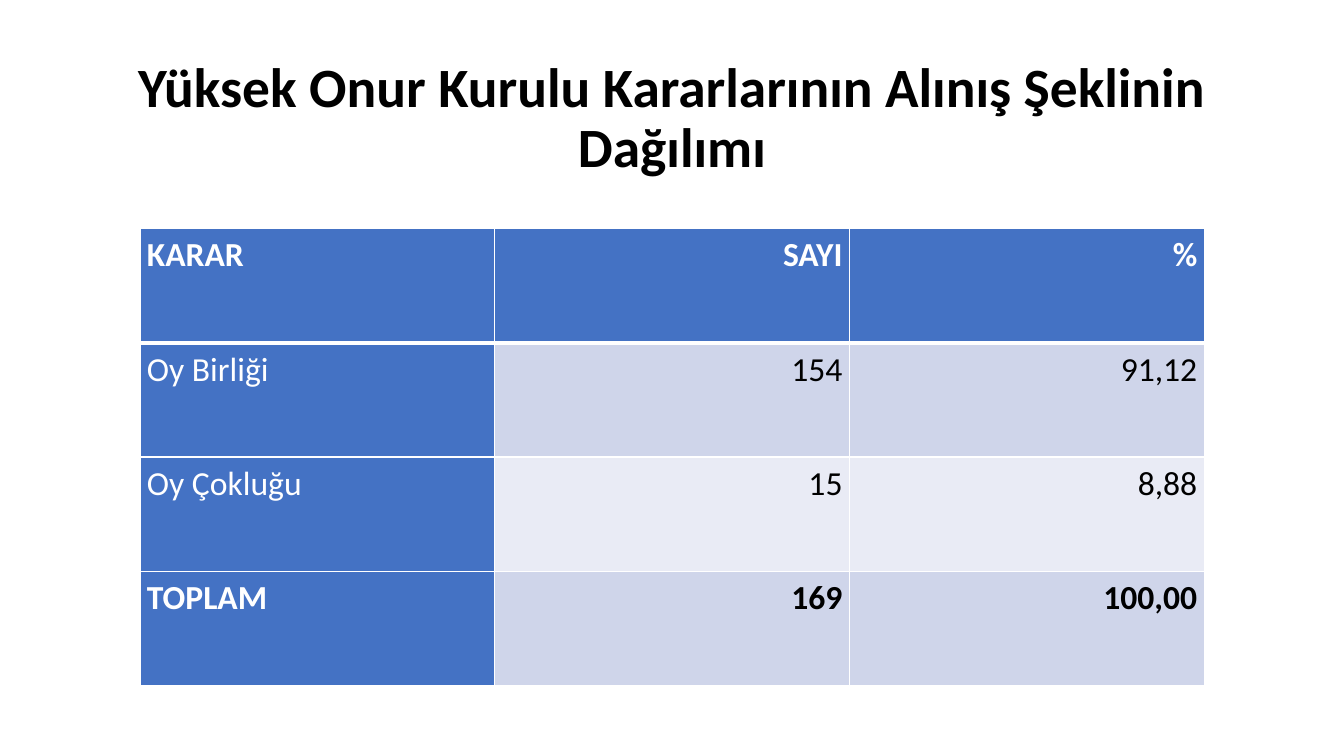
from dataclasses import dataclass

from lxml import etree
from pptx import Presentation
from pptx.dml.color import RGBColor
from pptx.enum import text
from pptx.oxml.ns import qn
from pptx.util import Pt


@dataclass(frozen=True)
class Theme:
    font: str = "Calibri"
    title_size: float = 39.6
    cell_size: float = 24
    ink: str = "000000"
    white: str = "FFFFFF"
    accent: str = "4472C4"
    bands: tuple = ("CFD5EA", "E9EBF5")


THEME = Theme()
TITLE = "Yüksek Onur Kurulu Kararlarının Alınış Şeklinin Dağılımı"
ROWS = [
    ("KARAR", "SAYI", "%"),
    ("Oy Birliği", "154", "91,12"),
    ("Oy Çokluğu", "15", "8,88"),
    ("TOPLAM", "169", "100,00"),
]


def set_all(obj, values):
    for name, value in values.items():
        setattr(obj, name, value)


def write(tf, words, size, color, bold, **paragraph):
    p = tf.paragraphs[0]
    set_all(p, paragraph)
    r = p.add_run()
    r.text = words
    set_all(r.font, dict(name=THEME.font, size=Pt(size), bold=bold))
    r.font.color.rgb = RGBColor.from_string(color)


def set_borders(cell, widths):
    """Draw white cell borders; widths maps side (L, R, T, B) to points."""
    tc_pr = cell._tc.get_or_add_tcPr()
    for i, (side, width) in enumerate(widths.items()):
        ln = etree.Element(qn(f"a:ln{side}"), w=str(Pt(width)))
        fill = etree.SubElement(ln, qn("a:solidFill"))
        etree.SubElement(fill, qn("a:srgbClr"), val=THEME.white)
        tc_pr.insert(i, ln)


def add_title(slide, left, top, width, height):
    tf = slide.shapes.add_textbox(left, top, width, height).text_frame
    set_all(tf, dict(word_wrap=True, vertical_anchor=text.MSO_ANCHOR.MIDDLE))
    write(tf, TITLE, THEME.title_size, THEME.ink, True,
          alignment=text.PP_ALIGN.CENTER, line_spacing=0.9)


def add_decisions_table(slide, left, top, width, height):
    n_rows, n_cols = len(ROWS), len(ROWS[0])
    table = slide.shapes.add_table(n_rows, n_cols, left, top, width, height).table
    for i, row in enumerate(ROWS):
        for j, words in enumerate(row):
            cell = table.cell(i, j)
            header = i == 0 or j == 0
            set_all(cell, dict(margin_left=Pt(5), margin_right=Pt(5),
                               margin_top=0, margin_bottom=0))
            cell.fill.solid()
            cell.fill.fore_color.rgb = RGBColor.from_string(
                THEME.accent if header else THEME.bands[(i - 1) % 2])
            set_borders(cell, dict(L=1, R=1, T=3 if i == 1 else 1,
                                   B=3 if i == 0 else 1))
            write(cell.text_frame, words, THEME.cell_size,
                  THEME.white if header else THEME.ink, i in (0, n_rows - 1),
                  alignment=text.PP_ALIGN.RIGHT if j else text.PP_ALIGN.LEFT,
                  line_spacing=1.15, space_after=Pt(10))


def main():
    prs = Presentation()
    set_all(prs, dict(slide_width=Pt(960), slide_height=Pt(540)))
    slide = prs.slides.add_slide(prs.slide_layouts[6])
    add_title(slide, Pt(36), Pt(33), Pt(888), Pt(104.5))
    add_decisions_table(slide, Pt(100), Pt(163.5), Pt(760.2), Pt(326))
    prs.save("out.pptx")


if __name__ == "__main__":
    main()
